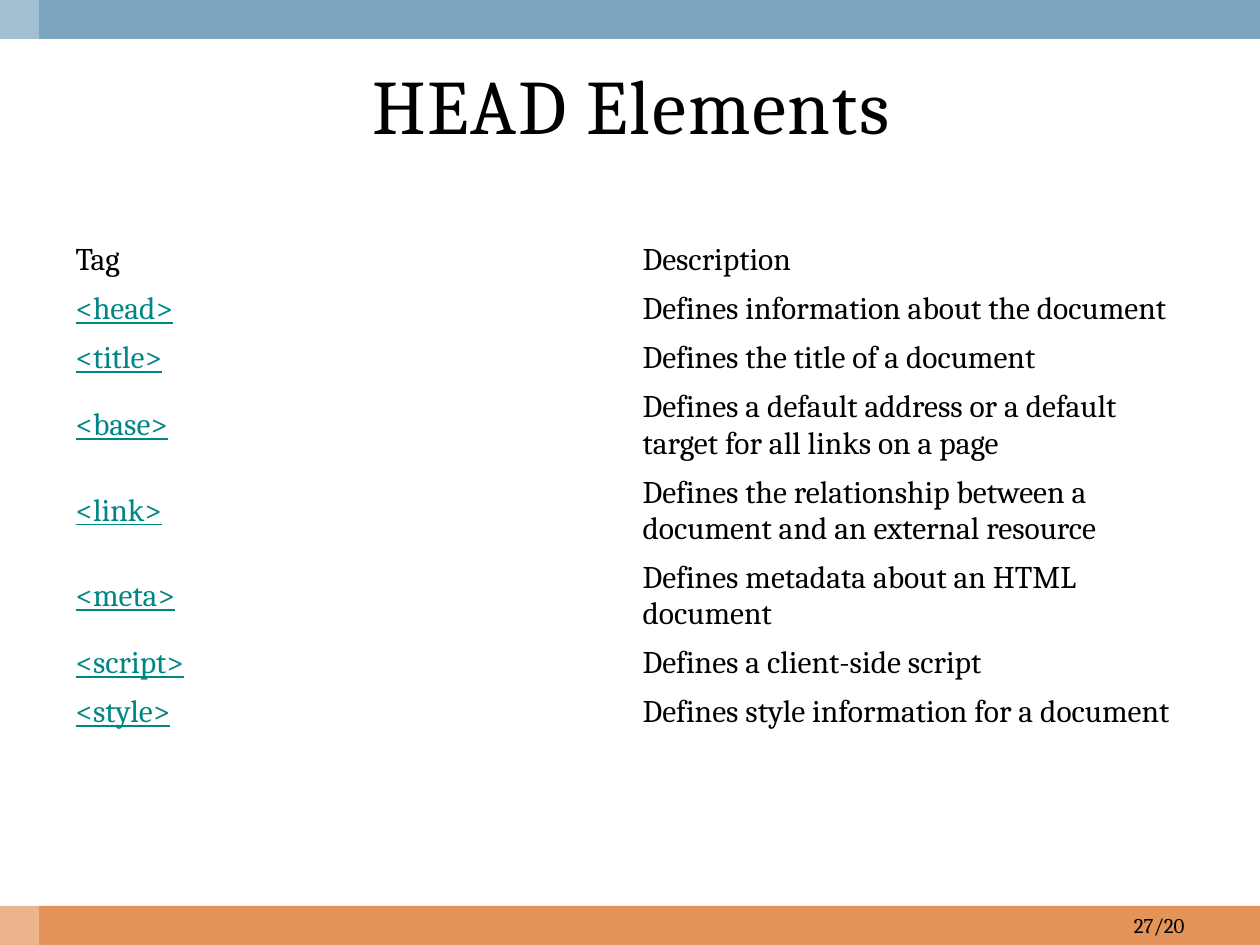
import pptx
import pptx.dml.color
import pptx.enum.shapes
import pptx.enum.text
import pptx.oxml.ns
import pptx.util
from dataclasses import dataclass
from lxml import etree

ALIGN = pptx.enum.text.PP_ALIGN
ANCHOR = pptx.enum.text.MSO_ANCHOR


@dataclass(frozen=True)
class Theme:
    font: str = "Cambria"
    text: str = "000000"
    link: str = "008685"
    white: str = "FFFFFF"
    blue: str = "7BA5BE"
    orange: str = "E49458"
    title_pt: int = 44
    body_pt: int = 18
    number_pt: int = 12


def px(n):
    return pptx.util.Emu(round(n * 914400 / 126))


def rgb(value):
    return pptx.dml.color.RGBColor.from_string(value)


class SlideBuilder:
    def __init__(self, slide, theme):
        self.s = slide
        self.theme = theme

    def run(self, p, text, size, color=None, underline=False):
        r = p.add_run()
        r.text = text
        r.font.name = self.theme.font
        r.font.size = pptx.util.Pt(size)
        r.font.bold = False
        r.font.underline = underline
        r.font.color.rgb = rgb(color or self.theme.text)
        return r

    def band(self, x, y, w, h, color, opacity=100):
        sp = self.s.shapes.add_shape(
            pptx.enum.shapes.MSO_SHAPE.RECTANGLE, px(x), px(y), px(w), px(h))
        sp.shadow.inherit = False
        sp.line.fill.background()
        sp.fill.solid()
        sp.fill.fore_color.rgb = rgb(color)
        if opacity < 100:
            clr = sp.fill._xPr.find(".//" + pptx.oxml.ns.qn("a:srgbClr"))
            alpha = etree.SubElement(clr, pptx.oxml.ns.qn("a:alpha"))
            alpha.set("val", str(opacity * 1000))

    def title(self, text, x, y, w, h):
        sp = self.s.shapes.title
        sp.left, sp.top, sp.width, sp.height = px(x), px(y), px(w), px(h)
        tf = sp.text_frame
        tf.vertical_anchor = ANCHOR.MIDDLE
        p = tf.paragraphs[0]
        p.alignment = ALIGN.CENTER
        r = self.run(p, text, self.theme.title_pt)
        r.font._element.set("spc", "100")

    def number(self, text, x, y, w, h):
        tf = self.s.shapes.add_textbox(px(x), px(y), px(w), px(h)).text_frame
        tf.word_wrap = True
        tf.vertical_anchor = ANCHOR.MIDDLE
        p = tf.paragraphs[0]
        p.alignment = ALIGN.RIGHT
        self.run(p, text, self.theme.number_pt)

    def table(self, rows, x, y, w, row_heights):
        columns = len(rows[0])
        table = self.s.shapes.add_table(
            len(rows), columns, px(x), px(y), px(w), px(sum(row_heights))).table
        table.first_row = False
        table.horz_banding = False
        for column in table.columns:
            column.width = px(w // columns)
        for i, (texts, height) in enumerate(zip(rows, row_heights)):
            table.rows[i].height = px(height)
            for j, text in enumerate(texts):
                cell = table.cell(i, j)
                cell.fill.background()
                cell.vertical_anchor = ANCHOR.MIDDLE
                is_link = text.startswith("<")
                color = self.theme.link if is_link else self.theme.text
                self.run(cell.text_frame.paragraphs[0], text,
                         self.theme.body_pt, color, is_link)


def main():
    width, height, bar = 1260, 945, 39
    single, double = 49, 85
    rows = [
        ("Tag", "Description"),
        ("<head>", "Defines information about the document"),
        ("<title>", "Defines the title of a document"),
        ("<base>", "Defines a default address or a default target for all links on a page"),
        ("<link>", "Defines the relationship between a document and an external resource"),
        ("<meta>", "Defines metadata about an HTML document"),
        ("<script>", "Defines a client-side script"),
        ("<style>", "Defines style information for a document"),
    ]
    two_line_tags = {"<base>", "<link>", "<meta>"}
    row_heights = [double if tag in two_line_tags else single for tag, _ in rows]

    prs = pptx.Presentation()
    prs.slide_width, prs.slide_height = px(width), px(height)
    theme = Theme()
    slide = SlideBuilder(prs.slides.add_slide(prs.slide_layouts[5]), theme)

    slide.band(0, height - bar, width, bar, theme.orange)
    slide.band(0, 0, width, bar, theme.blue)
    slide.band(0, 0, bar, height, theme.white, opacity=30)
    slide.table(rows, 63, 236, 1134, row_heights)
    slide.number("27/20", 903, height - bar, 294, bar)
    slide.title("HEAD Elements", 42, bar, 1179, 130)
    prs.save("out.pptx")


if __name__ == "__main__":
    main()
